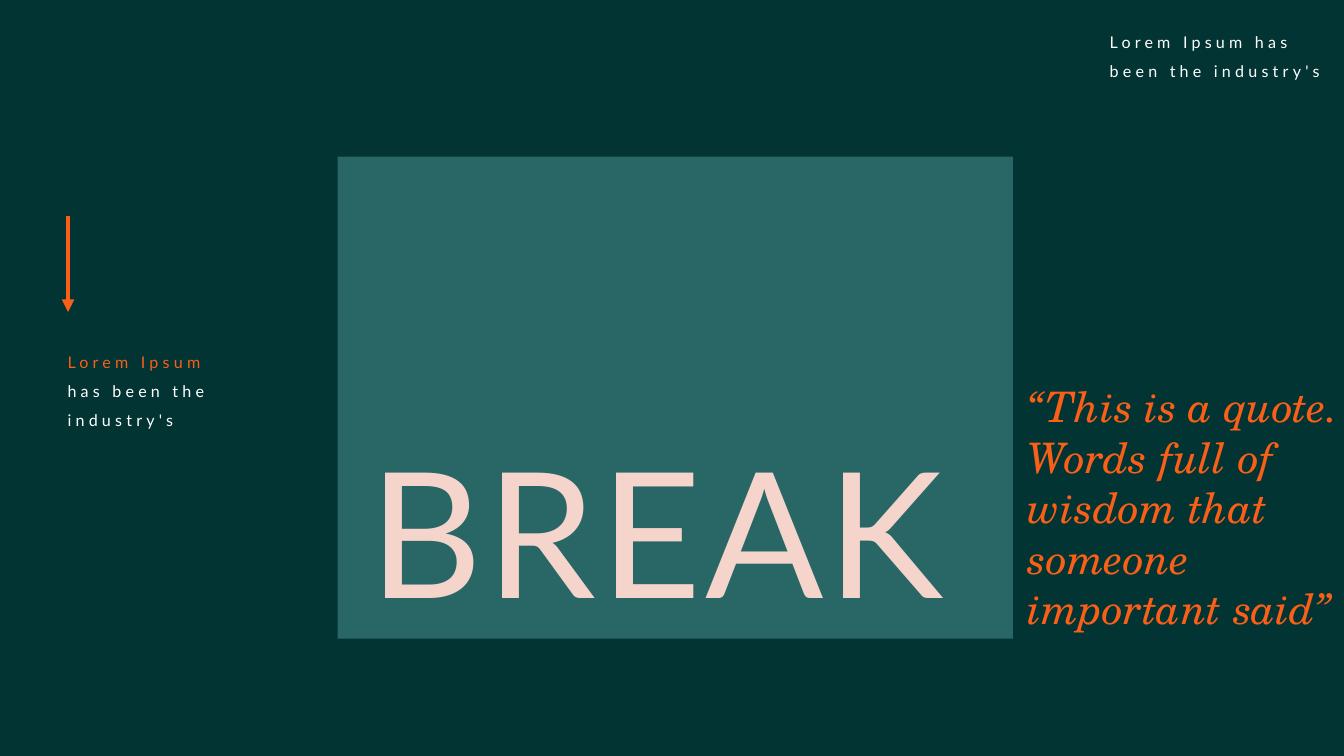
from lxml import etree
from pptx import Presentation
from pptx.dml.color import RGBColor
from pptx.enum import shapes, text
from pptx.oxml.ns import qn
from pptx.util import Inches, Pt

COLORS = {
    "night": "013432",
    "teal": "286766",
    "orange": "FB5F17",
    "white": "FFFFFF",
    "blush": "F5D4CB",
}
SANS, SERIF = "Lato", "TeX Gyre Schola"
PAGE_WIDTH, PAGE_HEIGHT = 26.67, 15


def color(name):
    return RGBColor.from_string(COLORS[name])


def add_panel(page, box, fill):
    panel = page.shapes.add_shape(
        shapes.MSO_SHAPE.RECTANGLE, *(Inches(length) for length in box))
    panel.shadow.inherit = False
    panel.fill.solid()
    panel.fill.fore_color.rgb = color(fill)
    panel.line.fill.background()


def add_text(page, box, runs, font, size, spacing=0, italic=None):
    """Place one paragraph; runs are (wording, color name) pairs."""
    label = page.shapes.add_textbox(*(Inches(length) for length in box))
    frame = label.text_frame
    frame.word_wrap = True
    frame.auto_size = text.MSO_AUTO_SIZE.SHAPE_TO_FIT_TEXT
    para = frame.paragraphs[0]
    para.font.name, para.font.size, para.font.italic = font, Pt(size), italic
    for wording, shade in runs:
        span = para.add_run()
        span.text = wording
        span.font.name, span.font.size, span.font.italic = font, Pt(size), italic
        span.font.color.rgb = color(shade)
        if spacing:
            span.font._element.set("spc", str(spacing * 100))
    return frame


def add_caption(page, box, runs):
    frame = add_text(page, box, runs, SANS, 23, spacing=6)
    frame.vertical_anchor = text.MSO_ANCHOR.MIDDLE
    frame.margin_left = frame.margin_right = Inches(0.05)
    frame.paragraphs[0].line_spacing = 1.5


def add_down_arrow(page, left, top, length):
    arrow = page.shapes.add_connector(
        shapes.MSO_CONNECTOR.STRAIGHT,
        Inches(left), Inches(top), Inches(left), Inches(top + length))
    arrow.line.color.rgb = color("orange")
    arrow.line.width = Pt(6)
    etree.SubElement(arrow.line._get_or_add_ln(), qn("a:tailEnd"), type="triangle")
    etree.SubElement(arrow._element.spPr, qn("a:effectLst"))


def add_side_note(page, box):
    """Arrow with a caption below it."""
    left, top, width, height = box
    add_down_arrow(page, left + 0.06, top, 1.9)
    add_caption(page, (left, top + 2.48, width, height - 2.48),
                [("Lorem Ipsum ", "orange"), ("has been the industry's", "white")])


def add_title_panel(page, box):
    """Panel with the title resting on its lower edge."""
    left, top, width, height = box
    add_panel(page, box, "teal")
    add_text(page, (left + 0.54, top + height - 4.31, 12.21, 4.31),
             [("BREAK", "blush")], SANS, 250, spacing=6)


def add_quote(page, box):
    quote = "“This is a quote. Words full of wisdom that someone important said”"
    add_text(page, box, [(quote, "orange")], SERIF, 60, italic=True)


def build_break_page(deck):
    page = deck.slides.add_slide(deck.slide_layouts[6])
    add_panel(page, (0, 0, PAGE_WIDTH, PAGE_HEIGHT), "night")
    add_title_panel(page, (6.7, 3.11, 13.4, 9.56))
    add_side_note(page, (1.29, 4.29, 3.06, 4.25))
    add_caption(page, (21.97, 0.43, 4.7, 1.19),
                [("Lorem Ipsum has been the industry's", "white")])
    add_quote(page, (20.3, 7.51, 6.7, 5.15))


def main():
    deck = Presentation()
    deck.slide_width, deck.slide_height = Inches(PAGE_WIDTH), Inches(PAGE_HEIGHT)
    build_break_page(deck)
    deck.save("out.pptx")


if __name__ == "__main__":
    main()
